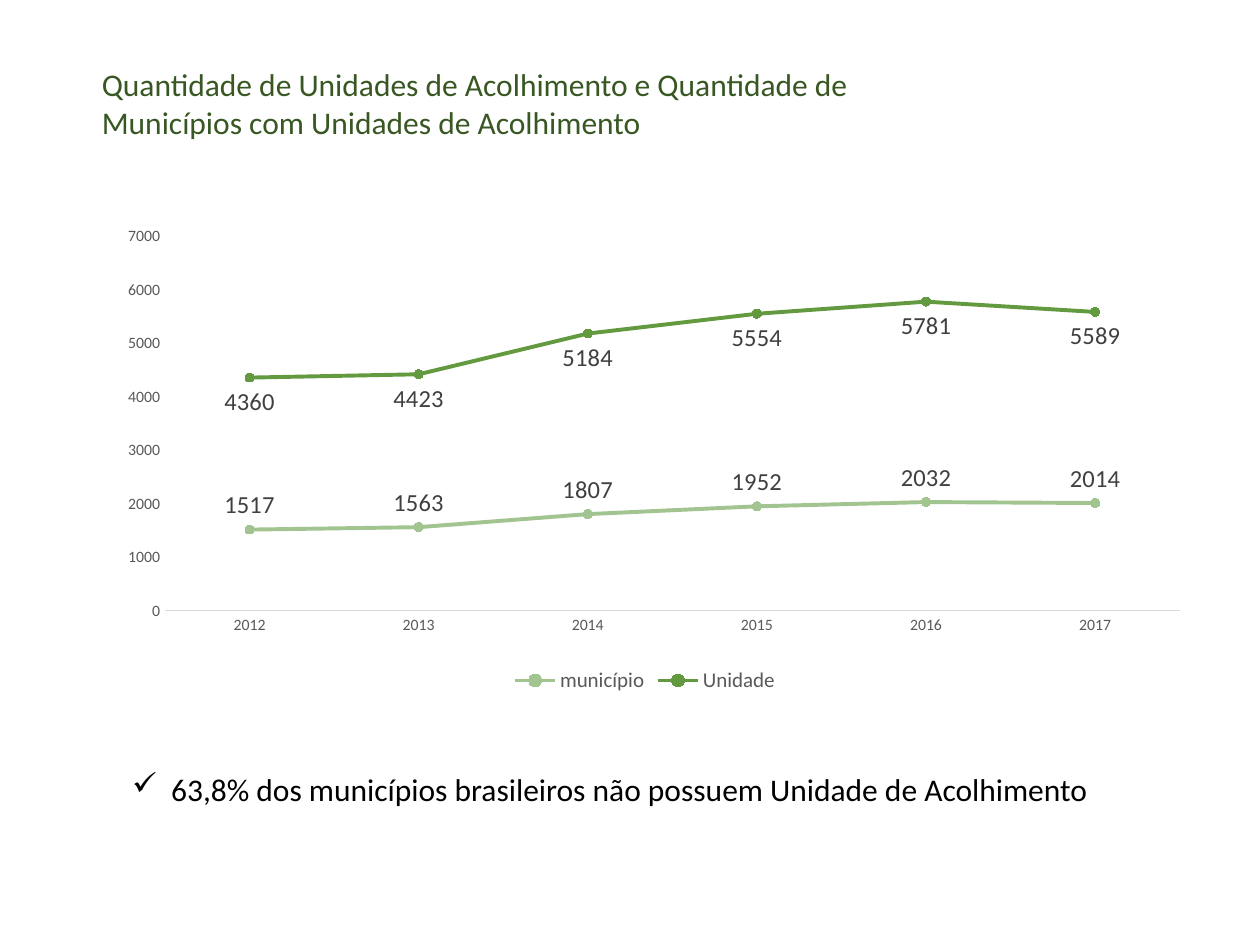
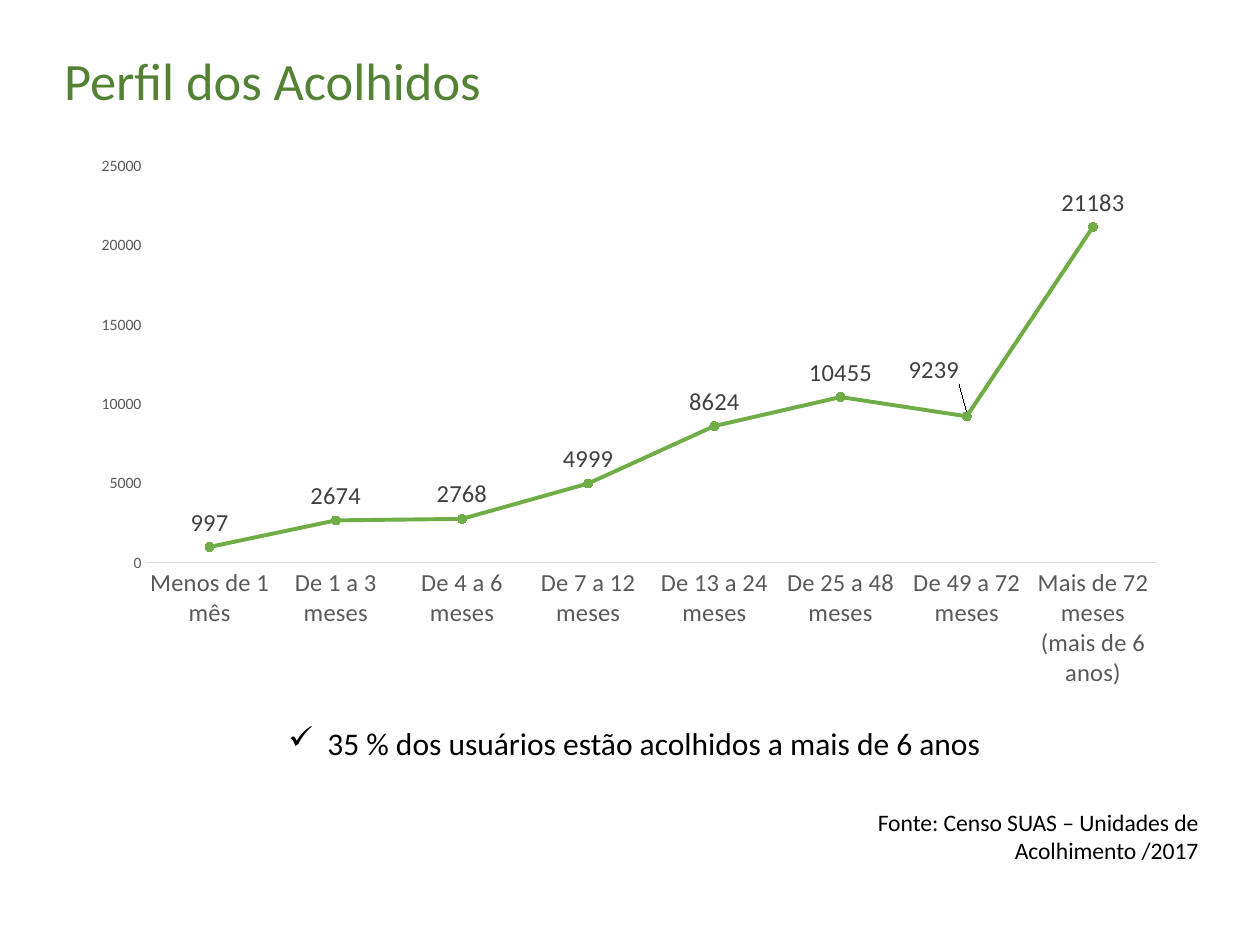
import pptx
import pptx.util
import pptx.dml.color
import pptx.chart.data
import pptx.enum.chart
import pptx.enum.text
import pptx.oxml
import pptx.oxml.ns
from dataclasses import dataclass


@dataclass(frozen=True)
class Theme:
    face: str = "Calibri"
    ink: str = "000000"
    dark: str = "385723"
    head: str = "548235"
    pale: str = "A1C490"
    deep: str = "639A3F"
    leaf: str = "70AD47"
    grey: str = "595959"
    label: str = "404040"
    rule: str = "D9D9D9"
    tick: float = 9
    base: float = 10
    key: float = 12
    source: float = 13.5
    value: float = 14
    body: float = 18
    title: float = 30
    line: float = 2.25
    hair: float = 0.75


theme = Theme()
kinds = pptx.enum.chart
above, below = kinds.XL_LABEL_POSITION.ABOVE, kinds.XL_LABEL_POSITION.BELOW
space = pptx.oxml.ns.nsdecls("c")

deck = pptx.Presentation()
deck.slide_width = pptx.util.Inches(10)
deck.slide_height = pptx.util.Inches(7.5)
col = deck.slide_width / 100
row = deck.slide_height / 75


def paint(font, size, tone):
    font.name = theme.face
    font.size = pptx.util.Pt(size)
    font.color.rgb = pptx.dml.color.RGBColor.from_string(tone)


def layout(x, y, wide=None, high=None):
    parts = ""
    if wide:
        parts = '<c:layoutTarget val="inner"/><c:xMode val="edge"/><c:yMode val="edge"/>'
    for tag, share in zip("xywh", (x, y, wide, high)):
        if share is not None:
            parts += f'<c:{tag} val="{share}"/>'
    return pptx.oxml.parse_xml(
        f"<c:layout {space}><c:manualLayout>{parts}</c:manualLayout></c:layout>")


years = ["2012", "2013", "2014", "2015", "2016", "2017"]
stays = ["Menos de 1 mês", "De 1 a 3 meses", "De 4 a 6 meses", "De 7 a 12 meses",
         "De 13 a 24 meses", "De 25 a 48 meses", "De 49 a 72 meses",
         "Mais de 72 meses (mais de 6 anos)"]

pages = [
    dict(
        box=(7.9, 14.7, 86.6, 40.7), plot=(0.06, 0.1, 0.93, 0.73),
        cats=years, size=theme.tick, top=7000, step=1000, form="General", key=True,
        lines=[
            ("município", [1517, 1563, 1807, 1952, 2032, 2014], theme.pale, above),
            ("Unidade", [4360, 4423, 5184, 5554, 5781, 5589], theme.deep, below),
        ],
        shifts={},
        texts=[
            ((7.1, 4.7, 72.3, 7.1), theme.body, theme.dark, "", "l",
             "Quantidade de Unidades de Acolhimento e Quantidade de "
             "Municípios com Unidades de Acolhimento"),
            ((9.5, 60.6, 85.9, 4), theme.body, theme.ink, "✓", "l",
             "63,8% dos municípios brasileiros não possuem Unidade de Acolhimento"),
        ],
    ),
    dict(
        box=(6.4, 11.9, 87.1, 43.7), plot=(0.06, 0.03, 0.92, 0.72),
        cats=stays, size=theme.value, top=25000, step=5000, form="###0", key=False,
        lines=[
            ("Series 1", [997, 2674, 2768, 4999, 8624, 10455, 9239, 21183],
             theme.leaf, above),
        ],
        shifts={6: (-0.03, -0.04)},
        texts=[
            ((21.9, 57, 59.8, 10.1), theme.body, theme.ink, "✓", "l",
             "35 % dos usuários estão acolhidos a mais de 6 anos"),
            ((4.1, 3.3, 85.2, 6.1), theme.title, theme.head, "", "l",
             "Perfil dos Acolhidos"),
            ((67.3, 63.6, 28.8, 5.6), theme.source, theme.ink, "", "r",
             "Fonte: Censo SUAS – Unidades de Acolhimento /2017"),
        ],
    ),
]

for page in pages:
    slide = deck.slides.add_slide(deck.slide_layouts[6])

    data = pptx.chart.data.CategoryChartData(number_format=page["form"])
    data.categories = page["cats"]
    for name, vals, tone, side in page["lines"]:
        data.add_series(name, vals)
    left, top, wide, high = page["box"]
    chart = slide.shapes.add_chart(
        kinds.XL_CHART_TYPE.LINE_MARKERS, round(left * col), round(top * row),
        round(wide * col), round(high * row), data).chart
    paint(chart.font, theme.base, theme.ink)
    chart.has_title = False
    chart.has_legend = page["key"]
    if page["key"]:
        chart.legend.position = kinds.XL_LEGEND_POSITION.BOTTOM
        chart.legend.include_in_layout = False
        paint(chart.legend.font, theme.key, theme.grey)

    for axis, size in ((chart.category_axis, page["size"]), (chart.value_axis, theme.tick)):
        axis.has_major_gridlines = False
        axis.major_tick_mark = axis.minor_tick_mark = kinds.XL_TICK_MARK.NONE
        paint(axis.tick_labels.font, size, theme.grey)
    edge = chart.category_axis.format.line
    edge.color.rgb = pptx.dml.color.RGBColor.from_string(theme.rule)
    edge.width = pptx.util.Pt(theme.hair)
    scale = chart.value_axis
    scale.format.line.fill.background()
    scale.minimum_scale, scale.maximum_scale = 0, page["top"]
    scale.major_unit = page["step"]
    scale.tick_labels.number_format = page["form"]
    scale.tick_labels.number_format_is_linked = False

    area = chart.plots[0]
    area.vary_by_categories = False
    for line, (name, vals, tone, side) in zip(area.series, page["lines"]):
        shade = pptx.dml.color.RGBColor.from_string(tone)
        line.smooth = False
        line.format.line.color.rgb = shade
        line.format.line.width = pptx.util.Pt(theme.line)
        line.marker.style = kinds.XL_MARKER_STYLE.CIRCLE
        line.marker.size = 5
        line.marker.format.fill.solid()
        line.marker.format.fill.fore_color.rgb = shade
        line.marker.format.line.color.rgb = shade
        tags = line.data_labels
        tags.show_value = True
        tags.position = side
        tags.number_format = page["form"]
        tags.number_format_is_linked = False
        paint(tags.font, theme.value, theme.label)
        for spot, shift in page["shifts"].items():
            tag = line.points[spot].data_label
            paint(tag.font, theme.value, theme.label)
            tag.position = side
            mark = tags._element.xpath(f"c:dLbl/c:idx[@val='{spot}']")[0]
            mark.addnext(layout(*shift))

    field = chart._chartSpace.chart.plotArea
    for old in field.xpath("c:layout"):
        field.remove(old)
    field.insert(0, layout(*page["plot"]))

    for (left, top, wide, high), size, tone, sign, side, words in page["texts"]:
        box = slide.shapes.add_textbox(
            round(left * col), round(top * row), round(wide * col), round(high * row))
        frame = box.text_frame
        frame.word_wrap = True
        frame.auto_size = pptx.enum.text.MSO_AUTO_SIZE.SHAPE_TO_FIT_TEXT
        para = frame.paragraphs[0]
        if side == "r":
            para.alignment = pptx.enum.text.PP_ALIGN.RIGHT
        if sign:
            props = para._p.get_or_add_pPr()
            dent = pptx.util.Inches(0.31)
            props.set("marL", str(dent))
            props.set("indent", str(-dent))
            props.append(pptx.oxml.parse_xml(
                f'<a:buChar {pptx.oxml.ns.nsdecls("a")} char="{sign}"/>'))
        run = para.add_run()
        run.text = words
        paint(run.font, size, tone)

deck.save("out.pptx")
